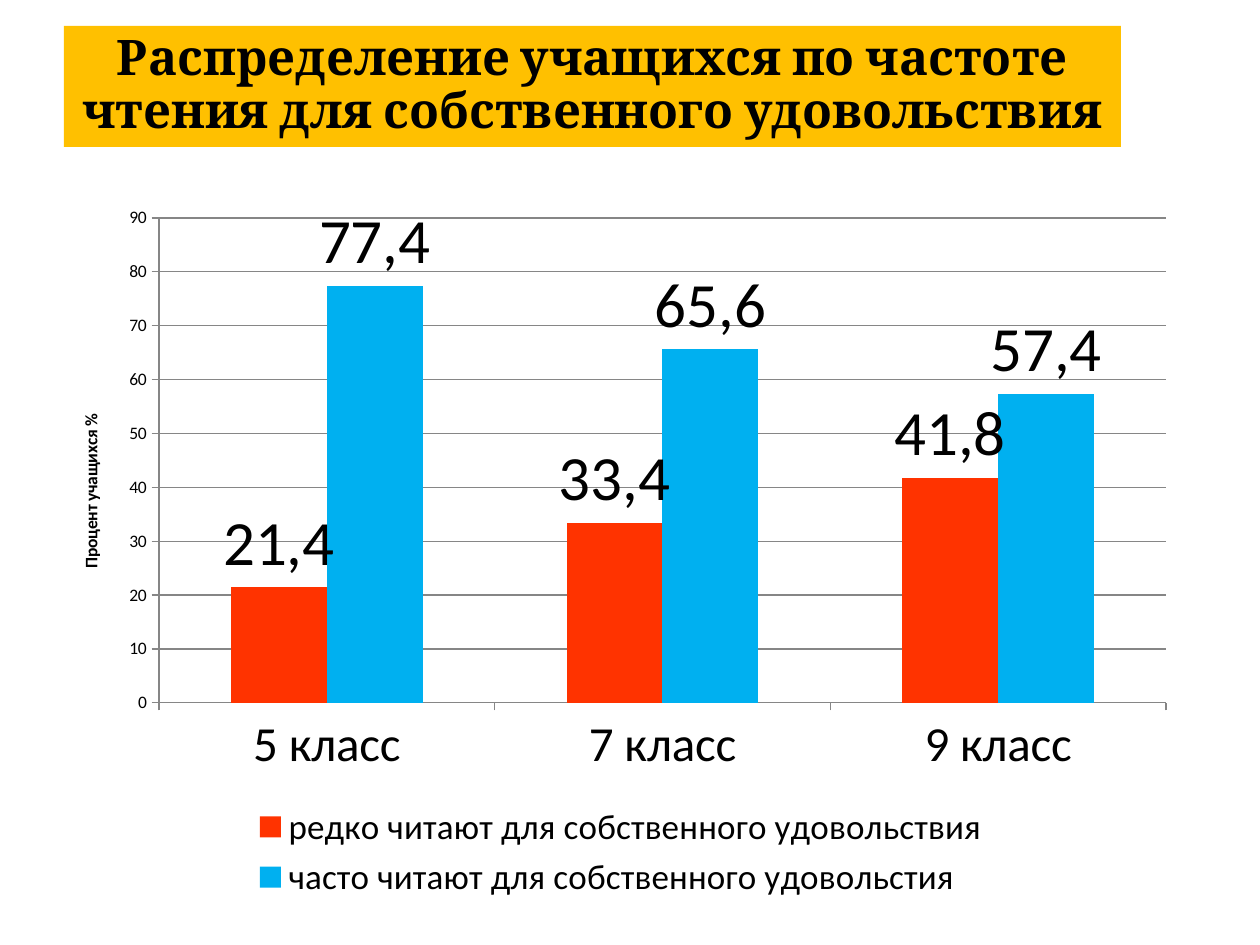
from dataclasses import dataclass

from lxml import etree
from pptx import Presentation
from pptx.chart.data import CategoryChartData
from pptx.dml.color import RGBColor
from pptx.enum.chart import (XL_CHART_TYPE, XL_LABEL_POSITION,
                             XL_LEGEND_POSITION, XL_TICK_MARK)
from pptx.enum.shapes import MSO_SHAPE
from pptx.enum.text import MSO_ANCHOR, PP_ALIGN
from pptx.oxml.ns import qn
from pptx.util import Emu, Pt

COLUMN = XL_CHART_TYPE.COLUMN_CLUSTERED
ABOVE = XL_LABEL_POSITION.OUTSIDE_END
BOTTOM = XL_LEGEND_POSITION.BOTTOM
OUT, NONE = XL_TICK_MARK.OUTSIDE, XL_TICK_MARK.NONE
RECT = MSO_SHAPE.RECTANGLE
MIDDLE, CENTER = MSO_ANCHOR.MIDDLE, PP_ALIGN.CENTER
SCALE = 914400 / 126


@dataclass
class Theme:
    ink: str = "000000"
    band: str = "FFC000"
    rare: str = "FF3300"
    often: str = "00B0F0"
    grid: str = "868686"
    head: str = "Cambria"
    body: str = "Calibri"
    title: int = 28
    axis: int = 10
    group: int = 28
    legend: int = 20
    label: int = 36


def px(count):
    return Emu(round(count * SCALE))


def apply(target, values):
    for name, value in values.items():
        setattr(target, name, value)


class Deck:
    def __init__(self, theme, width, height):
        self.theme = theme
        self.file = Presentation()
        apply(self.file, {"slide_width": px(width), "slide_height": px(height)})
        self.slide = self.file.slides.add_slide(self.file.slide_layouts[6])

    def style(self, font, size, face, bold=False):
        apply(font, {"size": Pt(size), "name": face, "bold": bold})
        font.color.rgb = RGBColor.from_string(self.theme.ink)

    def paint(self, fill, color):
        fill.solid()
        fill.fore_color.rgb = RGBColor.from_string(color)

    def banner(self, text, box):
        shape = self.slide.shapes.add_shape(RECT, *map(px, box))
        shape.shadow.inherit = False
        self.paint(shape.fill, self.theme.band)
        shape.line.fill.background()
        frame = shape.text_frame
        apply(frame, {"word_wrap": True, "vertical_anchor": MIDDLE})
        para = frame.paragraphs[0]
        apply(para, {"text": text, "alignment": CENTER, "line_spacing": 0.9})
        self.style(para.runs[0].font, self.theme.title, self.theme.head, True)

    def columns(self, groups, series, caption, box, plot):
        """Add a column chart; series holds (name, values, colour)."""
        theme = self.theme
        data = CategoryChartData()
        data.categories = groups
        for name, values, _ in series:
            data.add_series(name, values)
        chart = self.slide.shapes.add_chart(COLUMN, *map(px, box), data).chart
        apply(chart, {"has_title": False, "has_legend": True})
        self.style(chart.font, theme.axis, theme.body)
        apply(chart.legend, {"position": BOTTOM, "include_in_layout": False})
        self.style(chart.legend.font, theme.legend, theme.body)

        bars = chart.plots[0]
        apply(bars, {"gap_width": 150, "overlap": 0, "vary_by_categories": False})
        for item, (_, values, color) in zip(bars.series, series):
            self.paint(item.format.fill, color)
            item.invert_if_negative = False
            marks = item.data_labels
            apply(marks, {"show_value": True, "position": ABOVE})
            self.style(marks.font, theme.label, theme.body)
            for spot, value in enumerate(values):
                self.label(item.points[spot].data_label, value)

        self.axis(chart.category_axis, theme.group)
        self.axis(chart.value_axis, theme.axis)
        self.scale(chart.value_axis, caption)
        self.place(chart, box, plot)

    def label(self, mark, value):
        """Write the value with a decimal comma."""
        mark.position = ABOVE
        run = mark.text_frame.paragraphs[0].add_run()
        run.text = f"{value}".replace(".", ",")
        self.style(run.font, self.theme.label, self.theme.body)

    def axis(self, axis, size):
        apply(axis, {"major_tick_mark": OUT, "minor_tick_mark": NONE})
        self.style(axis.tick_labels.font, size, self.theme.body)
        self.rule(axis.format.line)

    def rule(self, line):
        line.width = Pt(0.75)
        self.paint(line.fill, self.theme.grid)

    def scale(self, axis, caption):
        apply(axis, {"minimum_scale": 0, "maximum_scale": 90, "major_unit": 10,
                     "has_major_gridlines": True, "has_title": True})
        self.rule(axis.major_gridlines.format.line)
        frame = axis.axis_title.text_frame
        frame.text = caption
        self.style(frame.paragraphs[0].runs[0].font, self.theme.axis,
                   self.theme.body, True)

    def place(self, chart, box, plot):
        """Fix the inner plot area inside the chart box."""
        left, top, width, height = box
        shares = {"x": (plot[0] - left) / width, "y": (plot[1] - top) / height,
                  "w": plot[2] / width, "h": plot[3] / height}
        area = chart.plots[0]._element.getparent()
        for old in area.findall(qn("c:layout")):
            area.remove(old)
        layout = etree.Element(qn("c:layout"))
        area.insert(0, layout)
        manual = etree.SubElement(layout, qn("c:manualLayout"))
        modes = {"layoutTarget": "inner", "xMode": "edge", "yMode": "edge"}
        for tag, value in {**modes, **shares}.items():
            text = value if tag in modes else f"{value:.4f}"
            etree.SubElement(manual, qn(f"c:{tag}")).set("val", text)


def main():
    theme = Theme()
    deck = Deck(theme, 1260, 945)
    deck.banner("Распределение учащихся по частоте чтения "
                "для собственного удовольствия", (64, 26, 1057, 121))
    deck.columns(
        ["5 класс", "7 класс", "9 класс"],
        [("редко читают для собственного удовольствия",
          (21.4, 33.4, 41.8), theme.rare),
         ("часто читают для собственного удовольстия",
          (77.4, 65.6, 57.4), theme.often)],
        "Процент учащихся %",
        box=(54, 195, 1134, 711), plot=(159, 218, 1007, 485))
    deck.file.save("out.pptx")


if __name__ == "__main__":
    main()
